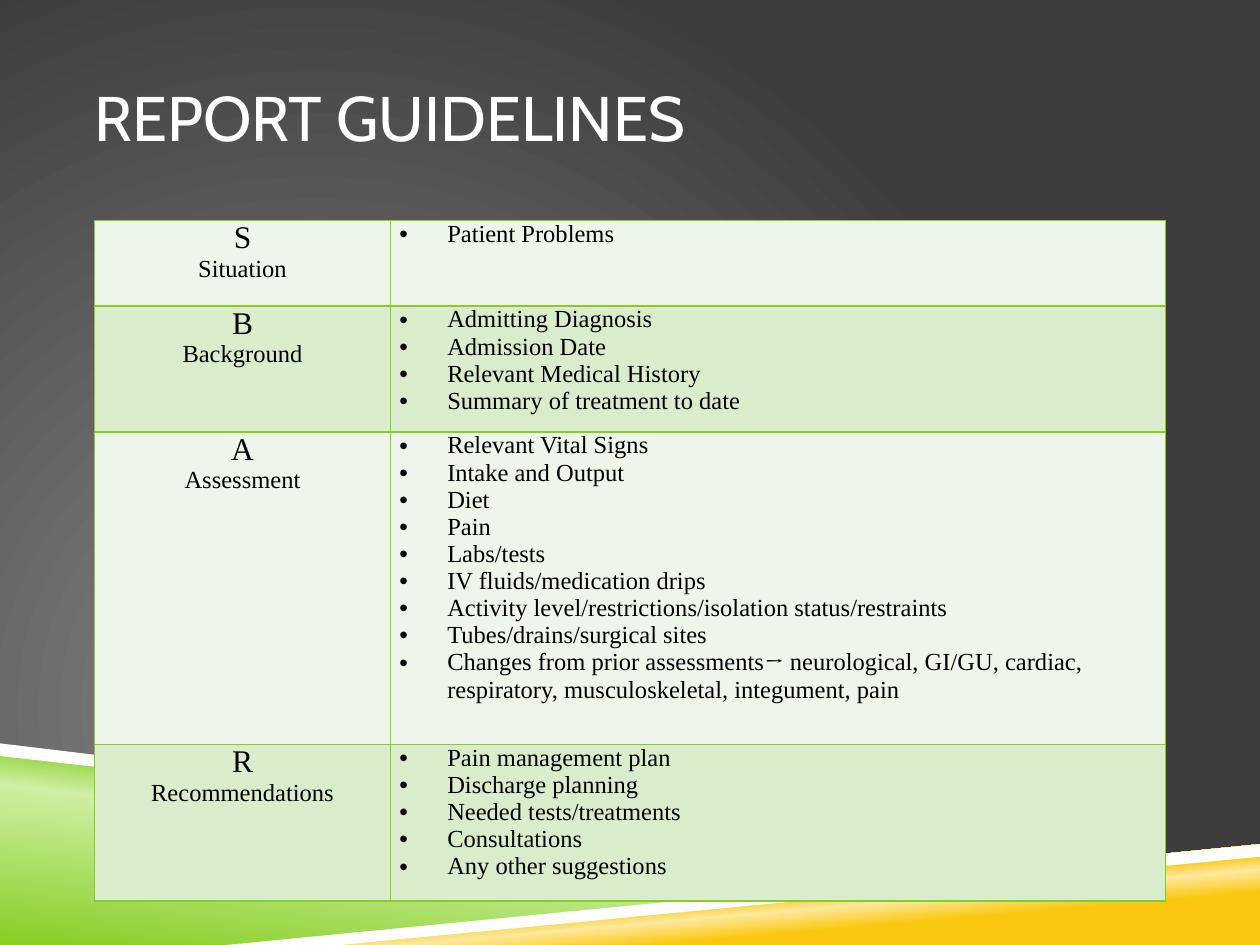
from pptx import Presentation, util as u
from pptx.dml.color import RGBColor
from pptx.enum import text
from pptx.oxml import parse_xml
from pptx.oxml.ns import nsdecls, qn

WHITE = RGBColor(0xFF, 0xFF, 0xFF)
BLACK = RGBColor(0, 0, 0)
GREEN = RGBColor(0x86, 0xCE, 0x24)
LIME = RGBColor(0xCF, 0xEF, 0xA4)
AMBER = RGBColor(0xFA, 0xC8, 0x10)
CREAM = RGBColor(0xFD, 0xE9, 0x9F)
GREY = RGBColor(0x87, 0x87, 0x87)
CHARCOAL = RGBColor(0x3D, 0x3D, 0x3D)
BANDS = RGBColor(0xED, 0xF6, 0xE8), RGBColor(0xD9, 0xED, 0xCD)

SERIF = "Times New Roman"
CELL = u.Inches(0.1)  # the slide is a grid of 100 columns by 75 rows
COLS, ROWS = 100, 75
TITLE_BOX = (7.5, 3, 85, 12.5)
TABLE_BOX = (7.5, 17.5, 85, 54)
COL_SHARES = (2.35, 6.15)
ROW_SHARES = (0.68, 1, 2.48, 1.24)

RADIAL = ('<a:path path="circle"><a:fillToRect l="50000" t="100000" '
          'r="100000" b="50000"/></a:path>')

SBAR = [
    ("S", "Situation", ["Patient Problems"]),
    ("B", "Background", ["Admitting Diagnosis", "Admission Date",
                         "Relevant Medical History",
                         "Summary of treatment to date"]),
    ("A", "Assessment", ["Relevant Vital Signs", "Intake and Output", "Diet",
                         "Pain", "Labs/tests", "IV fluids/medication drips",
                         "Activity level/restrictions/isolation status/restraints",
                         "Tubes/drains/surgical sites",
                         "Changes from prior assessments→ neurological, GI/GU, "
                         "cardiac, respiratory, musculoskeletal, integument, pain"]),
    ("R", "Recommendations", ["Pain management plan", "Discharge planning",
                              "Needed tests/treatments", "Consultations",
                              "Any other suggestions"]),
]


def grid(*values):
    return [round(v * CELL) for v in values]


def linear(degrees):
    return f'<a:lin ang="{degrees * 60000}" scaled="0"/>'


def set_gradient(element, stops, direction):
    """Swap the first solid fill inside element for a gradient."""
    gs = "".join(f'<a:gs pos="{pos * 1000}"><a:srgbClr val="{color}"/></a:gs>'
                 for pos, color in stops)
    solid = element.find(".//" + qn("a:solidFill"))
    solid.getparent().replace(solid, parse_xml(
        f'<a:gradFill {nsdecls("a")} rotWithShape="1">'
        f'<a:gsLst>{gs}</a:gsLst>{direction}</a:gradFill>'))


def add_polygon(s, points, color):
    fb = s.shapes.build_freeform(*points[0], scale=CELL)
    fb.add_line_segments(points[1:], close=True)
    sp = fb.convert_to_shape()
    sp.shadow.inherit = False
    sp.fill.solid()
    sp.fill.fore_color.rgb = color
    sp.line.fill.background()
    return sp


def add_backdrop(s, width, height):
    fill = s.background.fill
    fill.solid()
    fill.fore_color.rgb = CHARCOAL
    set_gradient(s._element, [(0, GREY), (100, CHARCOAL)], RADIAL)

    green = add_polygon(s, [(0, 59.7), (79.2, 69.2), (20, height), (0, height)], GREEN)
    set_gradient(green._element, [(0, GREEN), (52, LIME), (66, GREEN)], linear(277))
    amber = add_polygon(s, [(19.8, height), (width, 67.2), (width, height)], AMBER)
    set_gradient(amber._element, [(28, AMBER), (40, CREAM), (48, AMBER)], linear(265))
    add_polygon(s, [(0, 59.2), (0, 60), (79, 69.3), (83.2, 69)], WHITE)
    add_polygon(s, [(width, 66.9), (18.4, height), (26.6, height), (width, 67.7)], WHITE)


def add_run(p, words, size, color=BLACK, name=SERIF):
    r = p.add_run()
    r.text = words
    for key, value in {"size": u.Pt(size), "name": name, "bold": False}.items():
        setattr(r.font, key, value)
    r.font.color.rgb = color


def add_title(s, box, words):
    tf = s.shapes.add_textbox(*grid(*box)).text_frame
    for key, value in {"word_wrap": True, "margin_left": 0, "margin_right": 0,
                       "vertical_anchor": text.MSO_ANCHOR.MIDDLE}.items():
        setattr(tf, key, value)
    add_run(tf.paragraphs[0], words, 36, WHITE, "Cabin")


def set_borders(cell):
    tcPr = cell._tc.get_or_add_tcPr()
    for i, side in enumerate(("lnL", "lnR", "lnT", "lnB")):
        tcPr.insert(i, parse_xml(
            f'<a:{side} {nsdecls("a")} w="{u.Pt(1)}"><a:solidFill>'
            f'<a:srgbClr val="{GREEN}"/></a:solidFill></a:{side}>'))


def format_cell(cell, color):
    for key, value in {"margin_left": u.Inches(0.07), "margin_right": u.Inches(0.07),
                       "margin_top": 0, "margin_bottom": 0}.items():
        setattr(cell, key, value)
    cell.fill.solid()
    cell.fill.fore_color.rgb = color
    set_borders(cell)


def paragraphs(tf, count):
    return [tf.paragraphs[0]] + [tf.add_paragraph() for _ in range(count - 1)]


def write_heading(tf, letter, word):
    for p, words, size in zip(paragraphs(tf, 2), (letter, word), (18, 14)):
        p.alignment = text.PP_ALIGN.CENTER
        add_run(p, words, size)


def write_bullets(tf, items):
    indent = u.Inches(0.38)
    for p, item in zip(paragraphs(tf, len(items)), items):
        pPr = p._p.get_or_add_pPr()
        pPr.set("marL", str(indent))
        pPr.set("indent", str(-indent))
        pPr.append(parse_xml(f'<a:buFont {nsdecls("a")} typeface="Arial"/>'))
        pPr.append(parse_xml(f'<a:buChar {nsdecls("a")} char="•"/>'))
        before, arrow, after = item.partition("→")
        for words, name in ((before, SERIF), (arrow, "Cambria"), (after, SERIF)):
            if words:
                add_run(p, words, 14, name=name)


def add_sbar_table(s, box, rows):
    left, top, width, height = grid(*box)
    table = s.shapes.add_table(len(rows), 2, left, top, width, height).table
    for col, share in zip(table.columns, COL_SHARES):
        col.width = round(width * share / sum(COL_SHARES))
    for i, (letter, word, items) in enumerate(rows):
        table.rows[i].height = round(height * ROW_SHARES[i] / sum(ROW_SHARES))
        heading, details = table.rows[i].cells
        for cell in (heading, details):
            format_cell(cell, BANDS[i % 2])
        write_heading(heading.text_frame, letter, word)
        write_bullets(details.text_frame, items)


def main():
    prs = Presentation()
    prs.slide_width, prs.slide_height = grid(COLS, ROWS)
    s = prs.slides.add_slide(prs.slide_layouts[6])
    add_backdrop(s, COLS, ROWS)
    add_title(s, TITLE_BOX, "REPORT GUIDELINES")
    add_sbar_table(s, TABLE_BOX, SBAR)
    prs.save("out.pptx")


if __name__ == "__main__":
    main()
